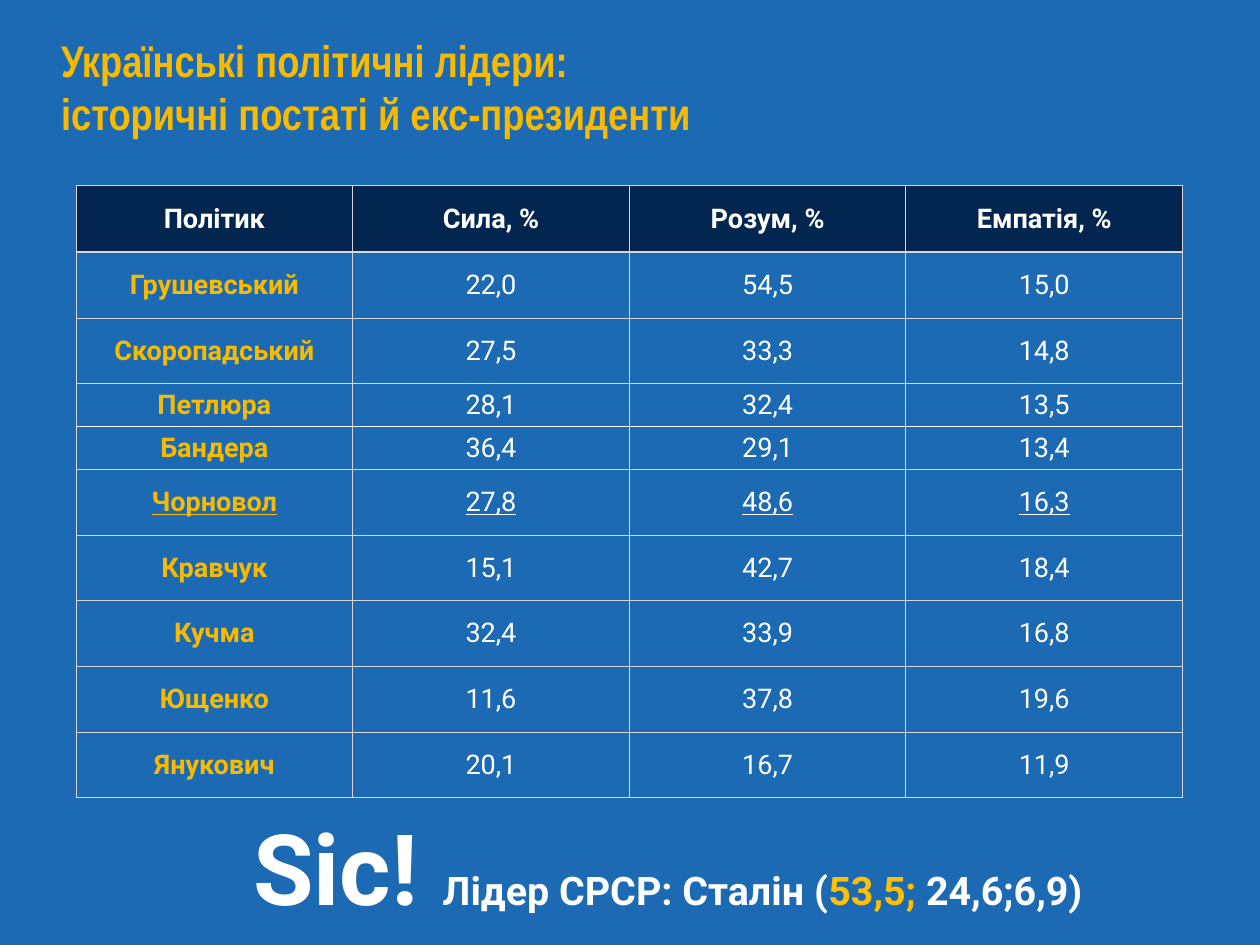
import dataclasses

import lxml.etree
import pptx
import pptx.dml.color
import pptx.enum.text
import pptx.oxml.ns
import pptx.presentation
import pptx.slide
import pptx.table
import pptx.text.text
import pptx.util
from pptx.util import Cm

COLOURS = {
    "page": "1B6AB3",
    "header": "032650",
    "text": "FFFFFF",
    "gold": "F8BA00",
    "amber": "FFC000",
    "grid": "D6D7D6",
}
BODY_FONT = "Roboto"
TITLE_FONT = "Arial Narrow"
INSET = Cm(0.15)
COLUMN_WIDTH = 7.93
HEADINGS = ("Політик", "Сила, %", "Розум, %", "Емпатія, %")


@dataclasses.dataclass(frozen=True)
class Politician:
    name: str
    scores: tuple[str, str, str]
    height: float = 1.88
    underline: bool = False
    top: str = "grid"
    bottom: str = "grid"


@dataclasses.dataclass(frozen=True)
class Span:
    text: str
    size: float
    colour: str = "text"


POLITICIANS = (
    Politician("Грушевський", ("22,0", "54,5", "15,0"), height=1.9),
    Politician("Скоропадський", ("27,5", "33,3", "14,8")),
    Politician("Петлюра", ("28,1", "32,4", "13,5"), height=1.07, bottom="text"),
    Politician("Бандера", ("36,4", "29,1", "13,4"), height=1.07, top="text"),
    Politician("Чорновол", ("27,8", "48,6", "16,3"), underline=True),
    Politician("Кравчук", ("15,1", "42,7", "18,4")),
    Politician("Кучма", ("32,4", "33,9", "16,8")),
    Politician("Ющенко", ("11,6", "37,8", "19,6")),
    Politician("Янукович", ("20,1", "16,7", "11,9")),
)
REMARK = (
    Span("Sic! ", 80),
    Span("Лідер СРСР: Сталін (", 32),
    Span("53,5; ", 32, "amber"),
    Span("24,6;6,9)", 32),
)


def rgb(colour: str) -> pptx.dml.color.RGBColor:
    return pptx.dml.color.RGBColor.from_string(COLOURS[colour])


def set_font(font: pptx.text.text.Font, name: str, size: float, colour: str, bold: bool) -> None:
    font.name = name
    font.size = pptx.util.Pt(size)
    font.bold = bold
    font.color.rgb = rgb(colour)


def set_frame(frame: pptx.text.text.TextFrame, anchor: pptx.enum.text.MSO_ANCHOR) -> None:
    frame.word_wrap = True
    frame.auto_size = pptx.enum.text.MSO_AUTO_SIZE.SHAPE_TO_FIT_TEXT
    frame.vertical_anchor = anchor
    frame.margin_left = frame.margin_right = INSET
    frame.margin_top = frame.margin_bottom = INSET


def add_border(cell: pptx.table._Cell, side: str, colour: str, width: float) -> None:
    qn = pptx.oxml.ns.qn
    properties = cell._tc.get_or_add_tcPr()
    line = lxml.etree.SubElement(properties, qn(f"a:ln{side}"), w=str(pptx.util.Pt(width)))
    fill = lxml.etree.SubElement(line, qn("a:solidFill"))
    lxml.etree.SubElement(fill, qn("a:srgbClr"), val=COLOURS[colour])


def fill_cell(cell: pptx.table._Cell, text: str, colour: str, bold: bool) -> None:
    cell.margin_left = cell.margin_right = INSET
    cell.margin_top = cell.margin_bottom = INSET
    cell.vertical_anchor = pptx.enum.text.MSO_ANCHOR.MIDDLE
    para = cell.text_frame.paragraphs[0]
    para.text = text
    para.alignment = pptx.enum.text.PP_ALIGN.CENTER
    set_font(para.font, BODY_FONT, 22, colour, bold)


def add_title(page: pptx.slide.Slide) -> None:
    title = page.shapes.title
    title.left, title.top, title.width, title.height = Cm(1.6), Cm(0.79), Cm(32.82), Cm(3.35)
    set_frame(title.text_frame, pptx.enum.text.MSO_ANCHOR.TOP)
    para = title.text_frame.paragraphs[0]
    para.text = "Українські політичні лідери:\vісторичні постаті й екс-президенти"
    para.alignment = pptx.enum.text.PP_ALIGN.LEFT
    set_font(para.font, TITLE_FONT, 36, "gold", True)


def add_scores(page: pptx.slide.Slide) -> None:
    heights = [1.9] + [politician.height for politician in POLITICIANS]
    table = page.shapes.add_table(
        len(heights), len(HEADINGS), Cm(2.18), Cm(5.33),
        Cm(COLUMN_WIDTH * len(HEADINGS)), Cm(sum(heights)),
    ).table
    table.horz_banding = False
    for column in table.columns:
        column.width = Cm(COLUMN_WIDTH)
    for row, height in zip(table.rows, heights):
        row.height = Cm(height)

    # Header row
    for cell, heading in zip(table.rows[0].cells, HEADINGS):
        fill_cell(cell, heading, "text", True)
        for side in "LRTB":
            add_border(cell, side, "grid", 2 if side == "B" else 1)
        cell.fill.solid()
        cell.fill.fore_color.rgb = rgb("header")

    # One row per politician, the name in gold
    for index, politician in enumerate(POLITICIANS, start=1):
        edges = {"L": "grid", "R": "grid", "T": politician.top, "B": politician.bottom}
        for column, text in enumerate((politician.name, *politician.scores)):
            cell = table.cell(index, column)
            is_name = column == 0
            fill_cell(cell, text, "gold" if is_name else "text", is_name)
            if politician.underline:
                cell.text_frame.paragraphs[0].font.underline = True
            for side, colour in edges.items():
                add_border(cell, side, colour, 1)
            cell.fill.background()


def add_remark(page: pptx.slide.Slide) -> None:
    box = page.shapes.add_textbox(Cm(4.29), Cm(22.99), Cm(29.72), Cm(3.71))
    set_frame(box.text_frame, pptx.enum.text.MSO_ANCHOR.MIDDLE)
    para = box.text_frame.paragraphs[0]
    para.alignment = pptx.enum.text.PP_ALIGN.CENTER
    for span in REMARK:
        run = para.add_run()
        run.text = span.text
        set_font(run.font, BODY_FONT, span.size, span.colour, True)


def main() -> None:
    deck = pptx.Presentation()
    deck.slide_width, deck.slide_height = Cm(36.12), Cm(27.1)
    page = deck.slides.add_slide(deck.slide_layouts.get_by_name("Title Only"))
    page.background.fill.solid()
    page.background.fill.fore_color.rgb = rgb("page")
    add_title(page)
    add_scores(page)
    add_remark(page)
    deck.save("out.pptx")


if __name__ == "__main__":
    main()
